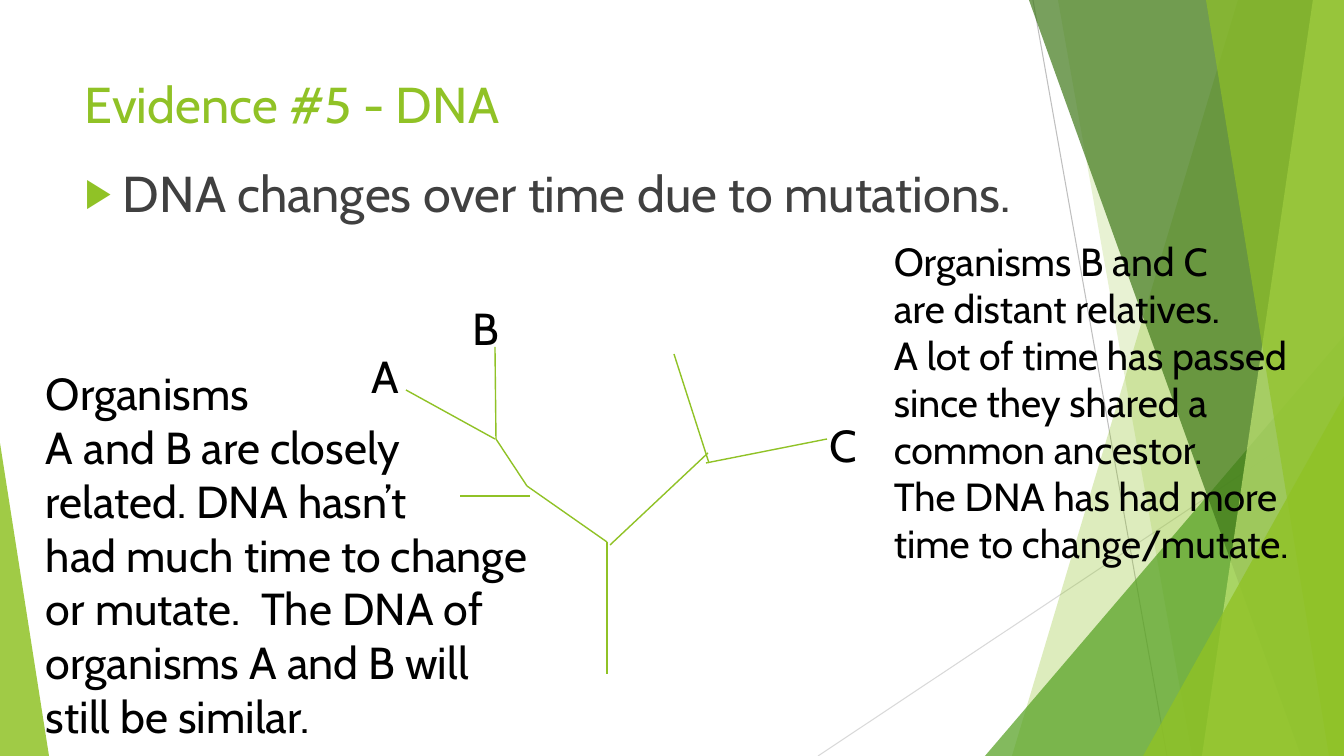
import pptx
import pptx.dml.color
import pptx.enum.shapes
import pptx.enum.text
import pptx.oxml.ns
import pptx.util
from collections import namedtuple
from dataclasses import dataclass
from lxml import etree

Box = namedtuple("Box", "left top width height")
WIDTH, HEIGHT = 1344, 756
SCALE = 12192000 / WIDTH  # EMU per px


@dataclass(frozen=True)
class Theme:
    font: str = "Cabin"
    green: str = "90C226"
    leaf: str = "54A021"
    forest: str = "3F7819"
    lime: str = "C0E474"
    body: str = "404040"
    ink: str = "000000"
    grey: str = "BFBFBF"
    pale_grey: str = "D9D9D9"
    heading_size: int = 36
    note_size: int = 32
    small_note_size: int = 28


THEME = Theme()


def px(length):
    return pptx.util.Emu(round(length * SCALE))


def rgb(colour):
    return pptx.dml.color.RGBColor.from_string(colour)


def add_child(parent, tag, **attributes):
    return etree.SubElement(parent, pptx.oxml.ns.qn(tag), attributes)


def add_line(slide, box, start, end, colour, points):
    line = slide.shapes.add_connector(
        pptx.enum.shapes.MSO_CONNECTOR.STRAIGHT,
        px(box.left + start[0]), px(box.top + start[1]),
        px(box.left + end[0]), px(box.top + end[1]))
    line.line.color.rgb = rgb(colour)
    line.line.width = pptx.util.Pt(points)
    add_child(line._element.spPr, "a:effectLst")


def paint(facet, colour, opacity):
    facet.shadow.inherit = False
    facet.line.fill.background()
    facet.fill.solid()
    facet.fill.fore_color.rgb = rgb(colour)
    colour_node = facet._element.spPr.find(".//" + pptx.oxml.ns.qn("a:srgbClr"))
    add_child(colour_node, "a:alpha", val=str(opacity * 1000))


def add_text(slide, box, lines, size, colour):
    frame = slide.shapes.add_textbox(*map(px, box)).text_frame
    frame.word_wrap = True
    frame.vertical_anchor = pptx.enum.text.MSO_ANCHOR.TOP
    frame.text = "\n".join(lines)
    for paragraph in frame.paragraphs:
        paragraph.font.name = THEME.font
        paragraph.font.size = pptx.util.Pt(size)
        paragraph.font.color.rgb = rgb(colour)
    return frame


def add_band(slide, box, top_x, bottom_x, colour, opacity):
    """Full-height band from a slanted left edge to the right side of the box."""
    outline = slide.shapes.build_freeform(top_x, 0, scale=SCALE)
    outline.add_line_segments(
        [(box.width, 0), (box.width, box.height), (bottom_x, box.height)])
    paint(outline.convert_to_shape(px(box.left), px(box.top)), colour, opacity)


def add_corner(slide, box, width, height, apex, colour, opacity):
    """Triangle in a bottom corner: apex 0 is the left side, 1 the right."""
    corner = slide.shapes.add_shape(
        pptx.enum.shapes.MSO_SHAPE.ISOSCELES_TRIANGLE,
        px(box.left + apex * (box.width - width)),
        px(box.top + box.height - height), px(width), px(height))
    corner.adjustments[0] = apex
    paint(corner, colour, opacity)


def add_backdrop(slide, box):
    # Thin crossing lines
    add_line(slide, box, (1033, 0), (1167, box.height), THEME.grey, 0.75)
    add_line(slide, box, (box.width, 406), (818, box.height), THEME.pale_grey, 0.75)
    # Translucent facets, back to front
    add_band(slide, box, 1238, 1012, THEME.green, 30)
    add_band(slide, box, 1058, 1192, THEME.green, 20)
    add_corner(slide, box, 359, 420, 1, THEME.leaf, 72)
    add_band(slide, box, 1029, 1301, THEME.forest, 70)
    add_band(slide, box, 1313, 1202, THEME.lime, 70)
    add_band(slide, box, 1206, 1329, THEME.green, 65)
    add_corner(slide, box, 201, 360, 1, THEME.green, 80)
    add_corner(slide, box, 49, 313, 0, THEME.green, 85)


def add_bullet(slide, box, sentence):
    frame = add_text(slide, box, [sentence], THEME.heading_size, THEME.body)
    paragraph = frame.paragraphs[0]
    paragraph.space_before = pptx.util.Pt(10)
    properties = paragraph._p.get_or_add_pPr()
    indent = px(38)
    properties.set("marL", str(indent))
    properties.set("indent", str(-indent))
    # Bullet nodes go between the spacing and the default run properties
    defaults = properties.find(pptx.oxml.ns.qn("a:defRPr"))
    properties.remove(defaults)
    add_child(add_child(properties, "a:buClr"), "a:srgbClr", val=THEME.green)
    add_child(properties, "a:buSzPct", val="80000")
    add_child(properties, "a:buFont", typeface=THEME.font)
    add_child(properties, "a:buChar", char="▶")
    properties.append(defaults)


def add_family_tree(slide, box):
    branches = [
        ((245, 378), (245, 246)),  # trunk
        ((245, 246), (165, 190)),  # left limb
        ((168, 200), (98, 200)),
        ((165, 190), (134, 143)),
        ((133, 143), (44, 94)),    # to A
        ((134, 143), (133, 51)),   # to B
        ((248, 249), (346, 157)),  # right limb
        ((347, 167), (312, 58)),
        ((344, 167), (465, 143)),  # to C
    ]
    for start, end in branches:
        add_line(slide, box, start, end, THEME.green, 1)
    for organism, x, y in [("A", 0, 48), ("B", 101, 0), ("C", 458, 117)]:
        add_text(slide, Box(box.left + x, box.top + y, 68, 65), [organism],
                 THEME.note_size, THEME.ink)


def main():
    deck = pptx.Presentation()
    deck.slide_width, deck.slide_height = px(WIDTH), px(HEIGHT)
    slide = deck.slides.add_slide(deck.slide_layouts[6])

    add_backdrop(slide, Box(0, 0, WIDTH, HEIGHT))
    # Heading and main point
    add_text(slide, Box(75, 68, 948, 91), ["Evidence #5 - DNA"],
             THEME.heading_size, THEME.green)
    add_bullet(slide, Box(75, 157, 1065, 563),
               "DNA changes over time due to mutations.")
    add_family_tree(slide, Box(362, 296, 526, 378))
    # Notes on either side of the tree
    add_text(slide, Box(36, 361, 672, 390), [
        "Organisms", "A and B are closely", "related. DNA hasn’t",
        "had much time to change", "or mutate.  The DNA of",
        "organisms A and B will", "still be similar.",
    ], THEME.note_size, THEME.ink)
    add_text(slide, Box(884, 232, 460, 343), [
        "Organisms B and C", "are distant relatives.",
        "A lot of time has passed", "since they shared a",
        "common ancestor.", "The DNA has had more", "time to change/mutate.",
    ], THEME.small_note_size, THEME.ink)

    deck.save("out.pptx")


if __name__ == "__main__":
    main()
